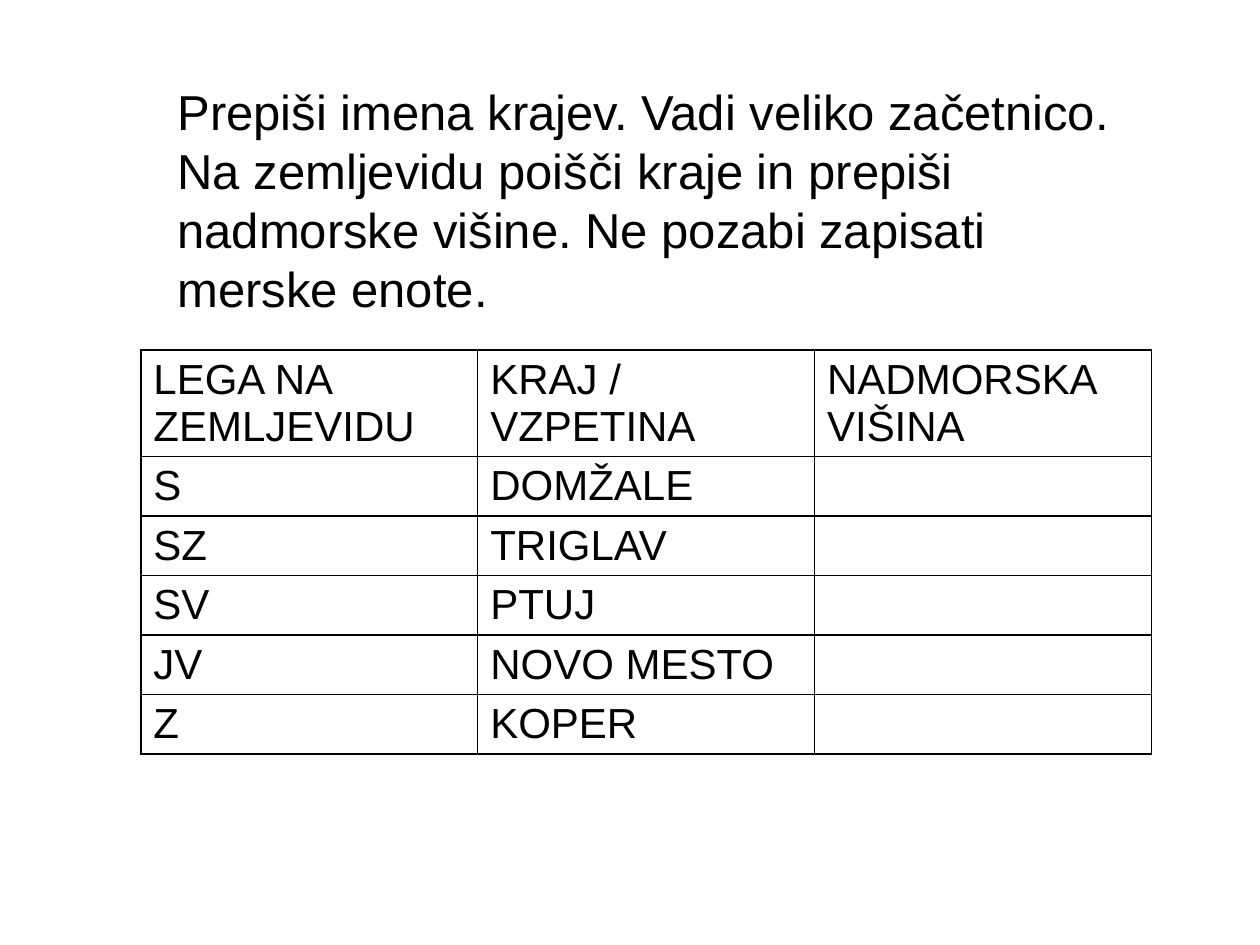
from lxml.etree import SubElement
from pptx import Presentation
from pptx.dml.color import RGBColor as Rgb
from pptx.enum.text import MSO_AUTO_SIZE as Fit
from pptx.oxml.ns import qn
from pptx.util import Cm, Pt

INK = "000000"
PAPER = "FFFFFF"
TASK = [
    "Prepiši imena krajev. Vadi veliko začetnico.",
    "Na zemljevidu poišči kraje in prepiši nadmorske višine. "
    "Ne pozabi zapisati merske enote.",
]
ROWS = [
    ["LEGA NA ZEMLJEVIDU", "KRAJ / VZPETINA", "NADMORSKA VIŠINA"],
    ["S", "DOMŽALE", ""],
    ["SZ", "TRIGLAV", ""],
    ["SV", "PTUJ", ""],
    ["JV", "NOVO MESTO", ""],
    ["Z", "KOPER", ""],
]


def color(code):
    return Rgb.from_string(code)


def style(frame, size):
    for para in frame.paragraphs:
        for run in para.runs:
            run.font.name = "Arial"
            run.font.size = Pt(size)
            run.font.color.rgb = color(INK)


def border(cell):
    props = cell._tc.get_or_add_tcPr()
    for side in ("lnL", "lnR", "lnT", "lnB"):
        line = SubElement(props, qn(f"a:{side}"), w=str(Pt(1)))
        fill = SubElement(line, qn("a:solidFill"))
        SubElement(fill, qn("a:srgbClr"), val=INK)


def add_task(slide):
    box = slide.shapes.add_textbox(Cm(3.33), Cm(1.52), Cm(19.43), Cm(5.05))
    frame = box.text_frame
    frame.word_wrap = True
    frame.auto_size = Fit.SHAPE_TO_FIT_TEXT
    frame.text = "\n".join(TASK)
    style(frame, 28)


def add_grid(slide):
    wide, high = Cm(6.79), Cm(1.03)
    count = len(ROWS[0])
    shape = slide.shapes.add_table(
        len(ROWS), count, Cm(2.84), Cm(7.06), wide * count, high * len(ROWS)
    )
    table = shape.table
    for col in table.columns:
        col.width = wide
    for row, words in zip(table.rows, ROWS):
        row.height = high
        for cell, word in zip(row.cells, words):
            cell.text_frame.text = word
            style(cell.text_frame, 24)
            border(cell)
            cell.fill.solid()
            cell.fill.fore_color.rgb = color(PAPER)


def main():
    deck = Presentation()
    deck.slide_width = Cm(25.4)
    deck.slide_height = Cm(19.05)
    slide = deck.slides.add_slide(deck.slide_layouts[6])
    add_grid(slide)
    add_task(slide)
    deck.save("out.pptx")


if __name__ == "__main__":
    main()
